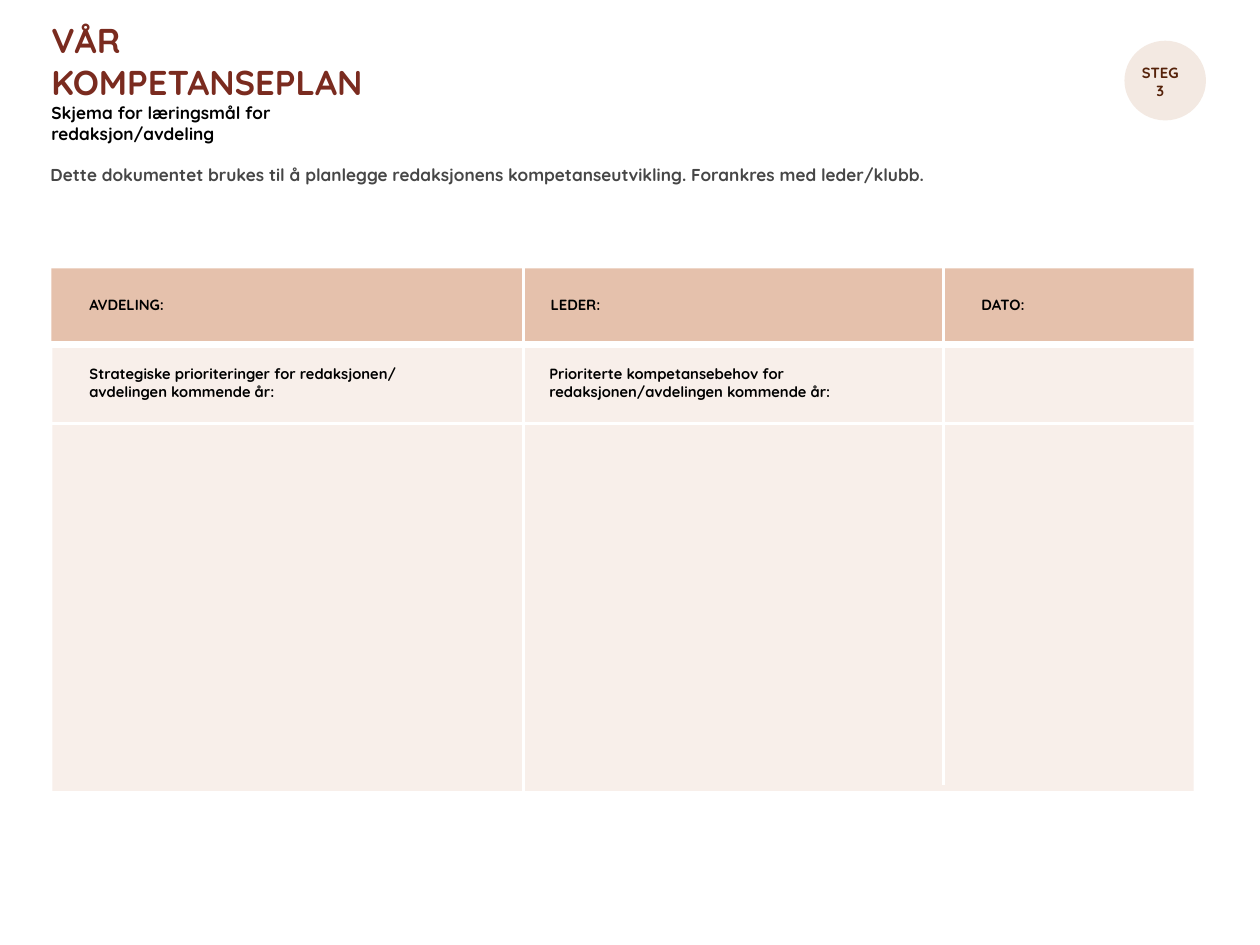
from lxml import etree
from pptx import Presentation
from pptx.dml.color import RGBColor
from pptx.enum.shapes import MSO_CONNECTOR, MSO_SHAPE
from pptx.enum.text import MSO_ANCHOR, PP_ALIGN
from pptx.oxml.ns import qn
from pptx.util import Inches, Pt

STRAIGHT = MSO_CONNECTOR.STRAIGHT
RECTANGLE, OVAL = MSO_SHAPE.RECTANGLE, MSO_SHAPE.OVAL
TOP, MIDDLE = MSO_ANCHOR.TOP, MSO_ANCHOR.MIDDLE
LEFT, CENTER = PP_ALIGN.LEFT, PP_ALIGN.CENTER

FONT = "Quicksand"
INSET = 0.06
BLACK = RGBColor(0x00, 0x00, 0x00)
WHITE = RGBColor(0xFF, 0xFF, 0xFF)
RUST = RGBColor(0x7A, 0x2B, 0x1F)
BROWN = RGBColor(0x55, 0x22, 0x0A)
GREY = RGBColor(0x46, 0x46, 0x46)
PEACH = RGBColor(0xE5, 0xC1, 0xAC)
CREAM = RGBColor(0xF5, 0xE9, 0xE1)
PALE = RGBColor(0xF3, 0xE9, 0xE2)

HEADING = [("VÅR KOMPETANSEPLAN", 28, RUST),
           ("Skjema for læringsmål for redaksjon/avdeling", 14, BLACK)]
INTRO = ("Dette dokumentet brukes til å planlegge redaksjonens "
         "kompetanseutvikling. Forankres med leder/klubb.")
STEP = "STEG 3"
FIELDS = [("AVDELING:", 0.95, 2.7, LEFT),
          ("LEDER:", 6.14, 0.71, CENTER),
          ("DATO:", 10.98, 0.68, CENTER)]
QUESTIONS = [
    ("Strategiske prioriteringer for redaksjonen/\vavdelingen kommende år:", 0.95, 4.59),
    ("Prioriterte kompetansebehov for redaksjonen/avdelingen kommende år:", 6.14, 4.33),
]
FIELD_TOP, FIELD_HEIGHT = 3.22, 0.43
QUESTION_TOP, QUESTION_HEIGHT = 3.97, 0.7
COLUMN_EDGES = [(5.91, 8.97, 3.88), (10.65, 8.86, 3.77)]
HEADER_EDGE_TOP, HEADER_EDGE_BOTTOM = 2.96, 3.92
QUESTION_EDGE = (13.56, 4.78, 0.5, 4.78)

prs = Presentation()
prs.slide_width, prs.slide_height = Inches(14.22), Inches(10.67)
slide = prs.slides.add_slide(prs.slide_layouts[6])


def add_block(kind, place, color, opacity=None):
    block = slide.shapes.add_shape(kind, *map(Inches, place))
    block.shadow.inherit = False
    block.fill.solid()
    block.fill.fore_color.rgb = color
    block.line.fill.background()
    if opacity:
        tint = block.fill._xPr.find(qn("a:solidFill"))[0]
        etree.SubElement(tint, qn("a:alpha")).set("val", str(opacity * 1000))


def add_divider(x1, y1, x2, y2):
    divider = slide.shapes.add_connector(STRAIGHT, *map(Inches, (x1, y1, x2, y2)))
    divider.line.color.rgb = WHITE
    divider.line.width = Pt(2)
    etree.SubElement(divider._element.spPr, qn("a:effectLst"))


def add_label(lines, place, align=LEFT, anchor=MIDDLE, sides=(INSET, INSET)):
    frame = slide.shapes.add_textbox(*map(Inches, place)).text_frame
    frame.word_wrap = True
    frame.vertical_anchor = anchor
    frame.margin_top = frame.margin_bottom = Inches(INSET)
    frame.margin_left, frame.margin_right = map(Inches, sides)
    frame.text = "\n".join(wording for wording, _, _ in lines)
    for paragraph, (_, size, color) in zip(frame.paragraphs, lines):
        paragraph.alignment = align
        for run in paragraph.runs:
            run.font.name = FONT
            run.font.size = Pt(size)
            run.font.bold = True
            run.font.color.rgb = color


add_label(HEADING, (0.52, 0.51, 4.46, 0.82))
add_block(RECTANGLE, (0.58, 3.03, 12.89, 0.82), PEACH)
add_block(RECTANGLE, (0.59, 3.93, 12.88, 5), CREAM, opacity=69)

for x, bottom, top in COLUMN_EDGES:
    add_divider(x, bottom, x, top)
    add_divider(x, HEADER_EDGE_BOTTOM, x, HEADER_EDGE_TOP)
add_divider(*QUESTION_EDGE)

for wording, left, width, align in FIELDS:
    add_label([(wording, 12, BLACK)], (left, FIELD_TOP, width, FIELD_HEIGHT), align)
for wording, left, width in QUESTIONS:
    add_label([(wording, 12, BLACK)], (left, QUESTION_TOP, width, QUESTION_HEIGHT))

add_block(OVAL, (12.69, 0.46, 0.92, 0.9), PALE)
add_label([(STEP, 12, BROWN)], (12.83, 0.76, 0.65, 0.32), CENTER, sides=(0, 2 * INSET))
add_label([(INTRO, 14, GREY)], (0.51, 1.8, 10.11, 0.35), anchor=TOP)

prs.save("out.pptx")
